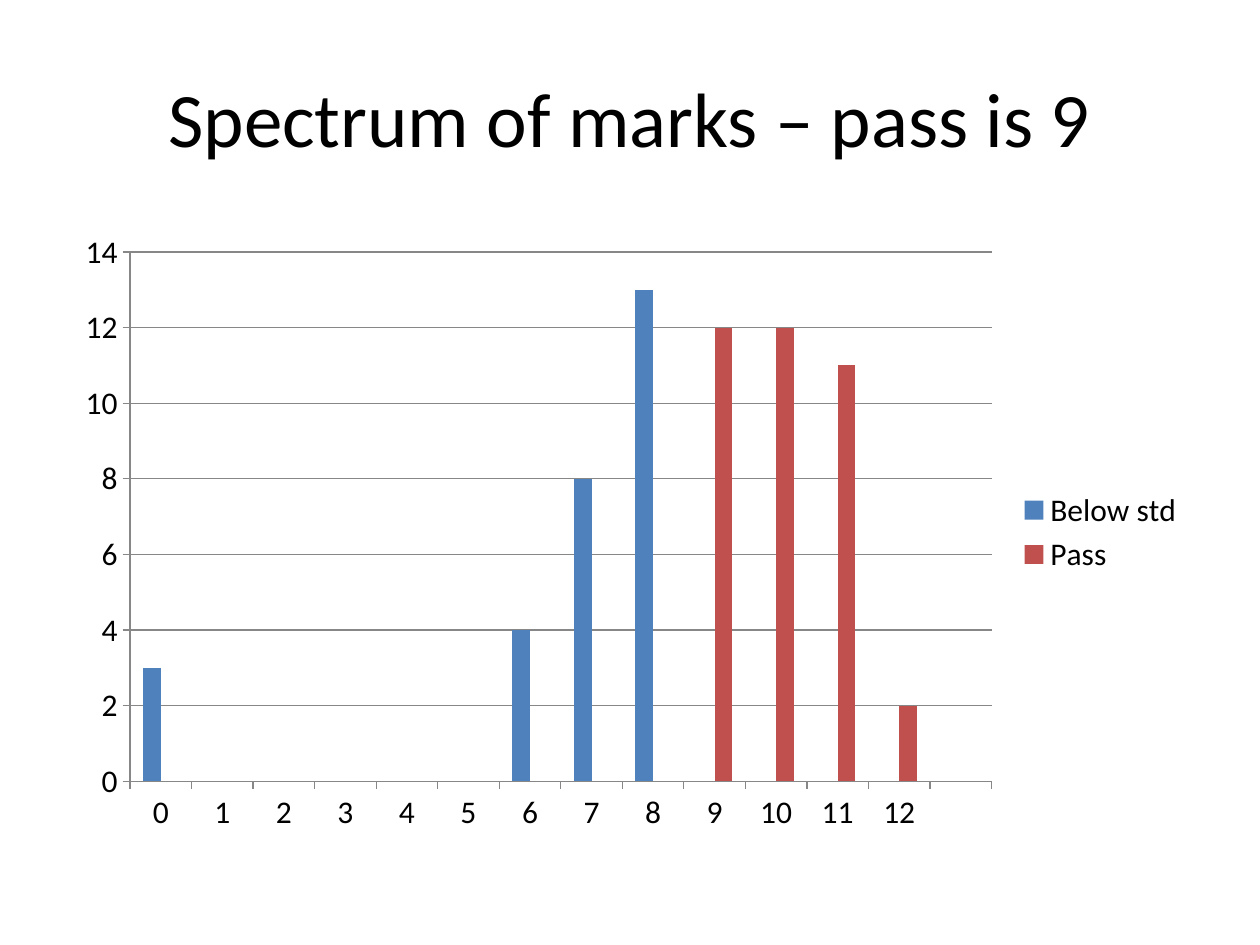
from pptx import Presentation
from pptx.chart.data import CategoryChartData
from pptx.dml.color import RGBColor
from pptx.enum import chart as charts, text as texts
from pptx.util import Pt

FONT = "Calibri"
COLORS = {"text": "000000", "line": "878787", "below": "4F81BD", "pass": "C0504D"}
CATEGORIES = [str(mark) for mark in range(13)] + [""]
# Series name: (color name, {mark: count})
SERIES = {
    "Below std": ("below", {0: 3, 6: 4, 7: 8, 8: 13}),
    "Pass": ("pass", {9: 12, 10: 12, 11: 11, 12: 2}),
}


def color(name):
    return RGBColor.from_string(COLORS[name])


def format_font(font, size):
    font.name = FONT
    font.size = Pt(size)
    font.color.rgb = color("text")


def set_text(shape, content, *, size, align, anchor):
    frame = shape.text_frame
    frame.word_wrap = True
    frame.vertical_anchor = anchor
    paragraph = frame.paragraphs[0]
    paragraph.alignment = align
    run = paragraph.add_run()
    run.text = content
    format_font(run.font, size)


def add_title(slide, content):
    title = slide.shapes.title
    title.left, title.top, title.width, title.height = Pt(36), Pt(21.6), Pt(648), Pt(90)
    set_text(title, content, size=44, align=texts.PP_ALIGN.CENTER,
             anchor=texts.MSO_ANCHOR.MIDDLE)


def format_line(line):
    line.color.rgb = color("line")
    line.width = Pt(0.75)


def format_axis(axis):
    axis.major_tick_mark = charts.XL_TICK_MARK.OUTSIDE
    axis.minor_tick_mark = charts.XL_TICK_MARK.NONE
    format_line(axis.format.line)


def add_marks_chart(slide):
    data = CategoryChartData()
    data.categories = CATEGORIES
    for name, (_, counts) in SERIES.items():
        data.add_series(name, [counts.get(mark) for mark in range(len(CATEGORIES))])
    chart = slide.shapes.add_chart(
        charts.XL_CHART_TYPE.COLUMN_CLUSTERED,
        Pt(36), Pt(126), Pt(648), Pt(356.4), data).chart
    chart.has_title = False
    format_font(chart.font, 18)

    chart.has_legend = True
    chart.legend.position = charts.XL_LEGEND_POSITION.RIGHT
    chart.legend.include_in_layout = False

    value_axis = chart.value_axis
    for axis in (chart.category_axis, value_axis):
        format_axis(axis)
    value_axis.minimum_scale, value_axis.maximum_scale = 0, 14
    value_axis.major_unit = 2
    value_axis.has_major_gridlines = True
    format_line(value_axis.major_gridlines.format.line)

    plot = chart.plots[0]
    plot.vary_by_categories = False
    plot.gap_width = 150
    plot.overlap = 0
    for series in plot.series:
        series.format.fill.solid()
        series.format.fill.fore_color.rgb = color(SERIES[series.name][0])


def main():
    presentation = Presentation()
    presentation.slide_width, presentation.slide_height = Pt(720), Pt(540)
    slide = presentation.slides.add_slide(presentation.slide_layouts[5])
    add_title(slide, "Spectrum of marks – pass is 9")
    add_marks_chart(slide)
    presentation.save("out.pptx")


if __name__ == "__main__":
    main()
